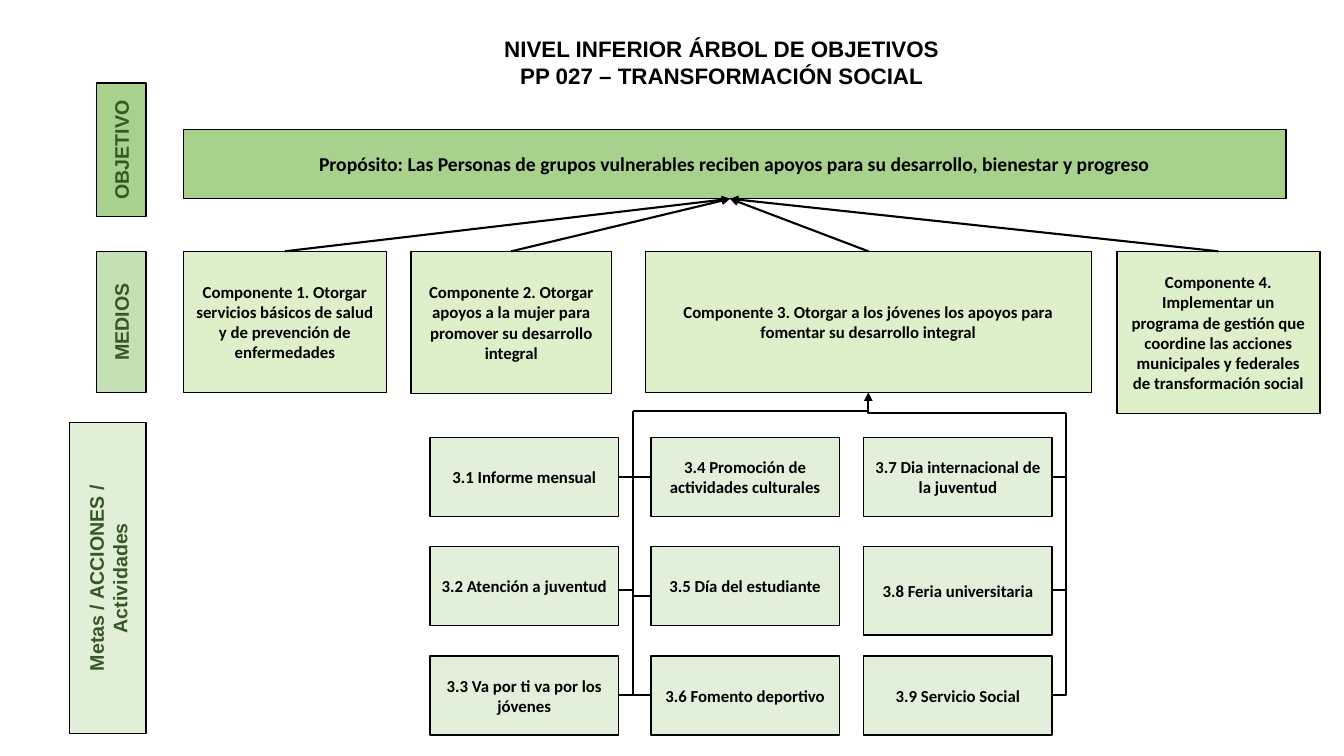
from lxml import etree
from pptx import Presentation
from pptx.dml.color import RGBColor
from pptx.enum import shapes, text
from pptx.oxml import ns
from pptx.util import Pt

# Content
TITLE = ["NIVEL INFERIOR ÁRBOL DE OBJETIVOS", "PP 027 – TRANSFORMACIÓN SOCIAL"]
GOAL = ("Propósito: Las Personas de grupos vulnerables reciben apoyos "
        "para su desarrollo, bienestar y progreso")
# Components: text, left, width, height
PARTS = [
    ("Componente 1. Otorgar servicios básicos de salud y de prevención "
     "de enfermedades", 131, 145, 101),
    ("Componente 2. Otorgar apoyos a la mujer para promover su desarrollo "
     "integral", 293.5, 143.5, 101.5),
    ("Componente 3. Otorgar a los jóvenes los apoyos para fomentar "
     "su desarrollo integral", 461, 318.5, 101),
    ("Componente 4. Implementar un programa de gestión que coordine las "
     "acciones municipales y federales de transformación social", 797.75, 145, 116),
]
# Activity columns: left, trunk x, middle joint y, texts
TASKS = [
    (307.25, 452, 421.25, ["3.1 Informe mensual", "3.2 Atención a juventud",
                           "3.3 Va por ti va por los jóvenes"]),
    (465, 452, 425.5, ["3.4 Promoción de actividades culturales",
                       "3.5 Día del estudiante", "3.6 Fomento deportivo"]),
    (617, 761.5, 421.25, ["3.7 Dia internacional de la juventud",
                          "3.8 Feria universitaria", "3.9 Servicio Social"]),
]
TALL = {"3.8 Feria universitaria": 63}
# Side labels: text, centre x, centre y, length, thickness, style
SIDES = [
    ("OBJETIVO", 86.5, 107, 95.5, 35.5, "goal"),
    ("MEDIOS", 86.5, 230, 101, 35.5, "means"),
    ("Metas / ACCIONES / Actividades", 77, 413, 222, 54.5, "side"),
]

# Theme: fill styles are colour and opacity in percent
THEME = {
    "goal": ("A9D18E", 100), "means": ("C5E0B4", 100), "part": ("92D050", 30),
    "task": ("C5E0B4", 49), "side": ("C5E0B4", 50),
    "ink": "000000", "label": "385723",
    "head": "Arial", "body": "Calibri",
    "title": 16, "large": 14, "small": 12, "edge": 1, "wire": 1.5,
}
GOAL_BOX = (131, 92.5, 787.5, 49.5)
PART_TOP = 179.5
TASK_TOP, TASK_W, TASK_H, STEP = 312.5, 134.5, 56.5, 78
BUS = {452: 293.75, 761.5: 294.75}

deck = Presentation()
deck.slide_width, deck.slide_height = Pt(960), Pt(540)
slide = deck.slides.add_slide(deck.slide_layouts[6])


def rgb(code):
    return RGBColor.from_string(code)


def add(node, tag, **attrs):
    return etree.SubElement(node, ns.qn(tag), attrs)


def write(frame, words, font, size, color):
    frame.word_wrap = True
    frame.text = words
    for para in frame.paragraphs:
        para.alignment = text.PP_ALIGN.CENTER
        for run in para.runs:
            run.font.name, run.font.size, run.font.bold = font, Pt(size), True
            run.font.color.rgb = rgb(color)


def box(words, x, y, w, h, style, font, size, color):
    shape = slide.shapes.add_shape(
        shapes.MSO_SHAPE.FLOWCHART_PROCESS, Pt(x), Pt(y), Pt(w), Pt(h))
    shape.shadow.inherit = False
    code, solid = THEME[style]
    shape.fill.solid()
    shape.fill.fore_color.rgb = rgb(code)
    if solid < 100:
        tint = shape._element.spPr.find(".//" + ns.qn("a:srgbClr"))
        add(tint, "a:alpha", val=str(solid * 1000))
    shape.line.color.rgb = rgb(THEME["ink"])
    shape.line.width = Pt(THEME["edge"])
    shape.text_frame.vertical_anchor = text.MSO_ANCHOR.MIDDLE
    write(shape.text_frame, words, font, size, color)
    return shape


def wire(x1, y1, x2, y2, bent=False, arrow=False):
    kind = shapes.MSO_CONNECTOR.ELBOW if bent else shapes.MSO_CONNECTOR.STRAIGHT
    line = slide.shapes.add_connector(kind, Pt(x1), Pt(y1), Pt(x2), Pt(y2))
    line.line.color.rgb = rgb(THEME["ink"])
    line.line.width = Pt(THEME["wire"])
    props = line._element.spPr
    if bent:
        props.find(ns.qn("a:prstGeom")).set("prst", "bentConnector2")
    if arrow:
        add(props.find(ns.qn("a:ln")), "a:tailEnd", type="triangle")
    add(props, "a:effectLst")
    return line


def drop(x1, y1, x2, y2):
    """Bend that runs down first, then sideways: a turned corner."""
    cx, cy = (x1 + x2) / 2, (y1 + y2) / 2
    half, rise = (y2 - y1) / 2, abs(x2 - x1) / 2
    side = 1 if x2 < x1 else -1
    line = wire(cx - side * half, cy - rise, cx + side * half, cy + rise, bent=True)
    turn = 90 if side > 0 else 270
    line._element.spPr.find(ns.qn("a:xfrm")).set("rot", str(turn * 60000))


# Title
head = slide.shapes.add_textbox(Pt(239), Pt(21.5), Pt(553), Pt(46)).text_frame
write(head, "\n".join(TITLE), THEME["head"], THEME["title"], THEME["ink"])
head.auto_size = text.MSO_AUTO_SIZE.SHAPE_TO_FIT_TEXT

# Goal and components
body = (THEME["body"], THEME["small"], THEME["ink"])
box(GOAL, *GOAL_BOX, "goal", THEME["body"], THEME["large"], THEME["ink"])
gx, gy, gw, gh = GOAL_BOX
hub = 521.5
for words, x, w, h in PARTS:
    box(words, x, PART_TOP, w, h, "part", *body)
    wire(x + w / 2, PART_TOP, hub, gy + gh, arrow=True)

# Activities with their joints
for x, trunk, joint, names in TASKS:
    edge = x if x > trunk else x + TASK_W
    for row, words in enumerate(names):
        y = TASK_TOP + row * STEP
        box(words, x, y, TASK_W, TALL.get(words, TASK_H), "task", *body)
        drop(trunk, BUS[trunk], edge, joint if row == 1 else y + TASK_H / 2)

# Trunks into component 3
words, x, w, h = PARTS[2]
for trunk, y in BUS.items():
    wire(trunk, y, x + w / 2, PART_TOP + h, bent=True, arrow=True)

# Side labels
for words, cx, cy, w, h, style in SIDES:
    label = box(words, cx - w / 2, cy - h / 2, w, h, style,
                THEME["head"], THEME["large"], THEME["label"])
    label.rotation = 270

deck.save("out.pptx")
